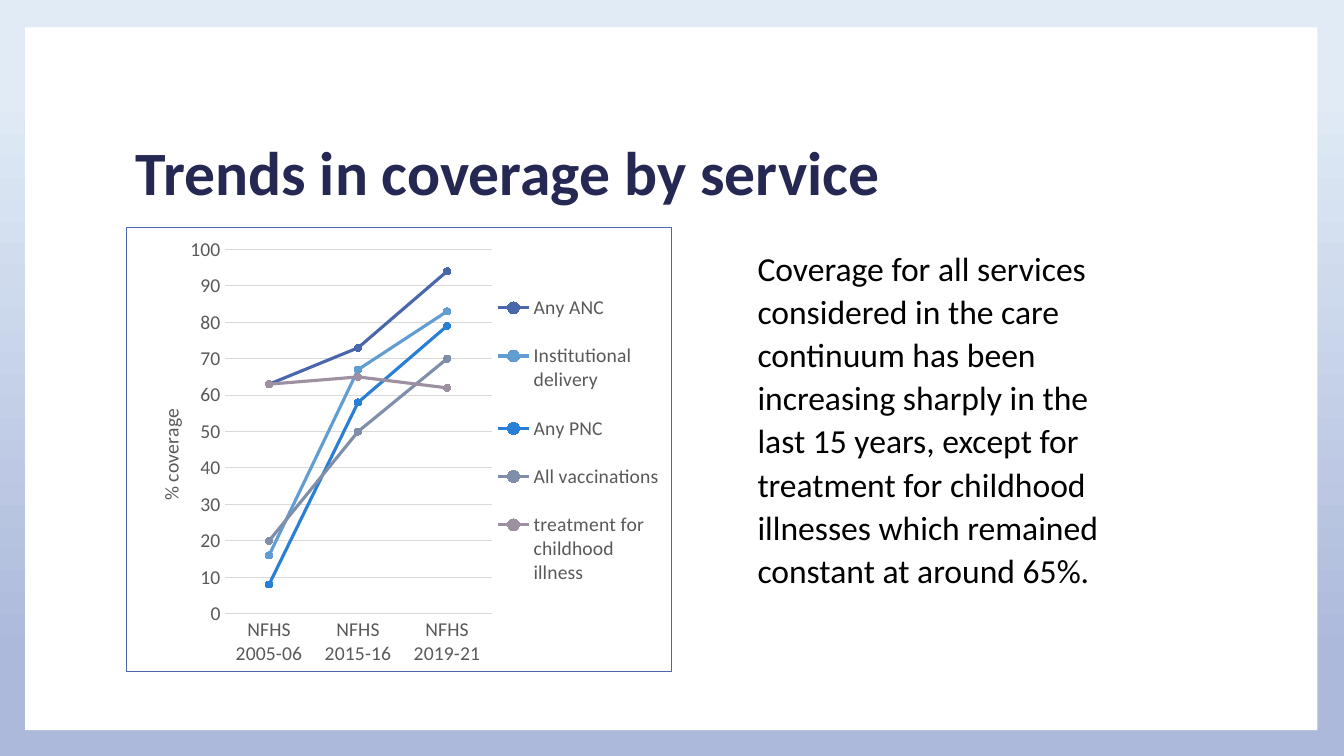
from lxml import etree
from pptx import Presentation
from pptx import util as u
from pptx.chart.data import CategoryChartData
from pptx.dml.color import RGBColor
from pptx.enum import chart as ch, shapes, text
from pptx.oxml import ns, parse_xml

FONT = "Calibri"
WHITE = RGBColor(0xFF, 0xFF, 0xFF)
BLACK = RGBColor(0, 0, 0)
NAVY = RGBColor(0x24, 0x28, 0x52)
GREY = RGBColor(0x59, 0x59, 0x59)
GRID = RGBColor(0xD9, 0xD9, 0xD9)
SKY = RGBColor(0xE0, 0xEB, 0xF6)
LAVENDER = RGBColor(0xAC, 0xB9, 0xDB)
BORDER = RGBColor(0x4A, 0x66, 0xAC)

SURVEYS = ["NFHS 2005-06", "NFHS 2015-16", "NFHS 2019-21"]
SERVICES = [
    ("Any ANC", (63, 73, 94), BORDER),
    ("Institutional delivery", (16, 67, 83), RGBColor(0x62, 0x9D, 0xD1)),
    ("Any PNC", (8, 58, 79), RGBColor(0x29, 0x7F, 0xD5)),
    ("All vaccinations", (20, 50, 70), RGBColor(0x7F, 0x8F, 0xA9)),
    ("treatment for childhood illness", (63, 65, 62), RGBColor(0x9D, 0x90, 0xA0)),
]
FINDING = (
    "Coverage for all services considered in the care continuum has been "
    "increasing sharply in the last 15 years, except for treatment for "
    "childhood illnesses which remained constant at around 65%."
)


def points(box):
    """Turn a left, top, width, height box in points into lengths."""
    return [u.Pt(length) for length in box]


def set_font(font, size, color, bold=False):
    """Give a font the slide's typeface with a size and colour."""
    font.name, font.size, font.bold = FONT, u.Pt(size), bold
    font.color.rgb = color


def add_backdrop(slide, box):
    """Fill the background with a vertical gradient and lay the white panel on it."""
    fill = slide.background.fill
    fill.gradient()
    fill.gradient_angle = 270
    for stop, position, color in zip(fill.gradient_stops, (0.12, 0.87), (SKY, LAVENDER)):
        stop.position = position
        stop.color.rgb = color
    panel = slide.shapes.add_shape(shapes.MSO_SHAPE.RECTANGLE, *points(box))
    panel.shadow.inherit = False
    panel.fill.solid()
    panel.fill.fore_color.rgb = WHITE
    panel.line.fill.background()


def add_paragraph(slide, box, wording, size, color, bold, spacing, anchor):
    """Place one wrapped paragraph in the given box."""
    frame = slide.shapes.add_textbox(*points(box)).text_frame
    frame.word_wrap = True
    frame.vertical_anchor = anchor
    paragraph = frame.paragraphs[0]
    paragraph.text = wording
    paragraph.line_spacing = spacing
    set_font(paragraph.font, size, color, bold)


def place_part(part, index, target=None, **fractions):
    """Fix a chart part at fractions of the chart's size."""
    for old in part.findall(ns.qn("c:layout")):
        part.remove(old)
    layout = etree.Element(ns.qn("c:layout"))
    manual = etree.SubElement(layout, ns.qn("c:manualLayout"))
    if target:
        etree.SubElement(manual, ns.qn("c:layoutTarget"), val=target)
    for side in "xy":
        etree.SubElement(manual, ns.qn(f"c:{side}Mode"), val="edge")
    for side, fraction in fractions.items():
        etree.SubElement(manual, ns.qn(f"c:{side}"), val=str(fraction))
    part.insert(index, layout)


def style_axes(chart):
    """Style the survey axis and the coverage axis."""
    survey, coverage = chart.category_axis, chart.value_axis
    for axis in (survey, coverage):
        axis.major_tick_mark = axis.minor_tick_mark = ch.XL_TICK_MARK.NONE
        set_font(axis.tick_labels.font, 14, GREY)
    coverage.minimum_scale, coverage.maximum_scale, coverage.major_unit = 0, 100, 10
    coverage.format.line.fill.background()
    for line in (survey.format.line, coverage.major_gridlines.format.line):
        line.color.rgb = GRID
        line.width = u.Pt(0.75)
    heading = coverage.axis_title.text_frame
    heading.text = "% coverage"
    set_font(heading.paragraphs[0].font, 14, GREY)


def add_coverage_chart(slide, box):
    """Draw the line chart of coverage by service in the given box."""
    data = CategoryChartData()
    data.categories = SURVEYS
    for service, values, _ in SERVICES:
        data.add_series(service, values)
    chart = slide.shapes.add_chart(
        ch.XL_CHART_TYPE.LINE_MARKERS, *points(box), data).chart
    set_font(chart.font, 14, BLACK)
    chart.has_title = False
    chart.plots[0].vary_by_categories = False
    style_axes(chart)

    chart.has_legend = True
    chart.legend.position = ch.XL_LEGEND_POSITION.RIGHT
    chart.legend.include_in_layout = False
    set_font(chart.legend.font, 14, GREY)

    for series, (_, _, color) in zip(chart.plots[0].series, SERVICES):
        series.smooth = False
        series.format.line.color.rgb = color
        series.format.line.width = u.Pt(2.25)
        series.marker.style = ch.XL_MARKER_STYLE.CIRCLE
        series.marker.size = 5
        series.marker.format.fill.solid()
        series.marker.format.fill.fore_color.rgb = color
        series.marker.format.line.color.rgb = color

    root = chart.element
    place_part(root.xpath(".//c:plotArea")[0], 0, "inner", x=0.18, y=0.05, w=0.49, h=0.82)
    place_part(root.xpath(".//c:valAx/c:title")[0], 1, x=0.05, y=0.4)
    place_part(root.xpath(".//c:legend")[0], 1, x=0.69, y=0.1, w=0.3, h=0.76)
    root.find(ns.qn("c:chart")).addnext(parse_xml(
        f'<c:spPr {ns.nsdecls("c", "a")}><a:noFill/><a:ln w="{u.Pt(0.75)}">'
        f'<a:solidFill><a:srgbClr val="{BORDER}"/></a:solidFill></a:ln></c:spPr>'))


def build_slide(prs):
    """Build the slide on service coverage trends."""
    slide = prs.slides.add_slide(prs.slide_layouts[6])
    add_backdrop(slide, (18, 19.5, 923, 502))
    add_paragraph(slide, (90, 48, 778, 155), "Trends in coverage by service",
                  44, NAVY, True, 0.9, text.MSO_ANCHOR.MIDDLE)
    add_coverage_chart(slide, (90, 162, 390, 318))
    add_paragraph(slide, (534, 171.5, 259, 255), FINDING,
                  24, BLACK, False, 1.07, text.MSO_ANCHOR.TOP)


def main():
    """Create and save the presentation."""
    prs = Presentation()
    prs.slide_width, prs.slide_height = u.Pt(960), u.Pt(540)
    build_slide(prs)
    prs.save("out.pptx")


if __name__ == "__main__":
    main()
